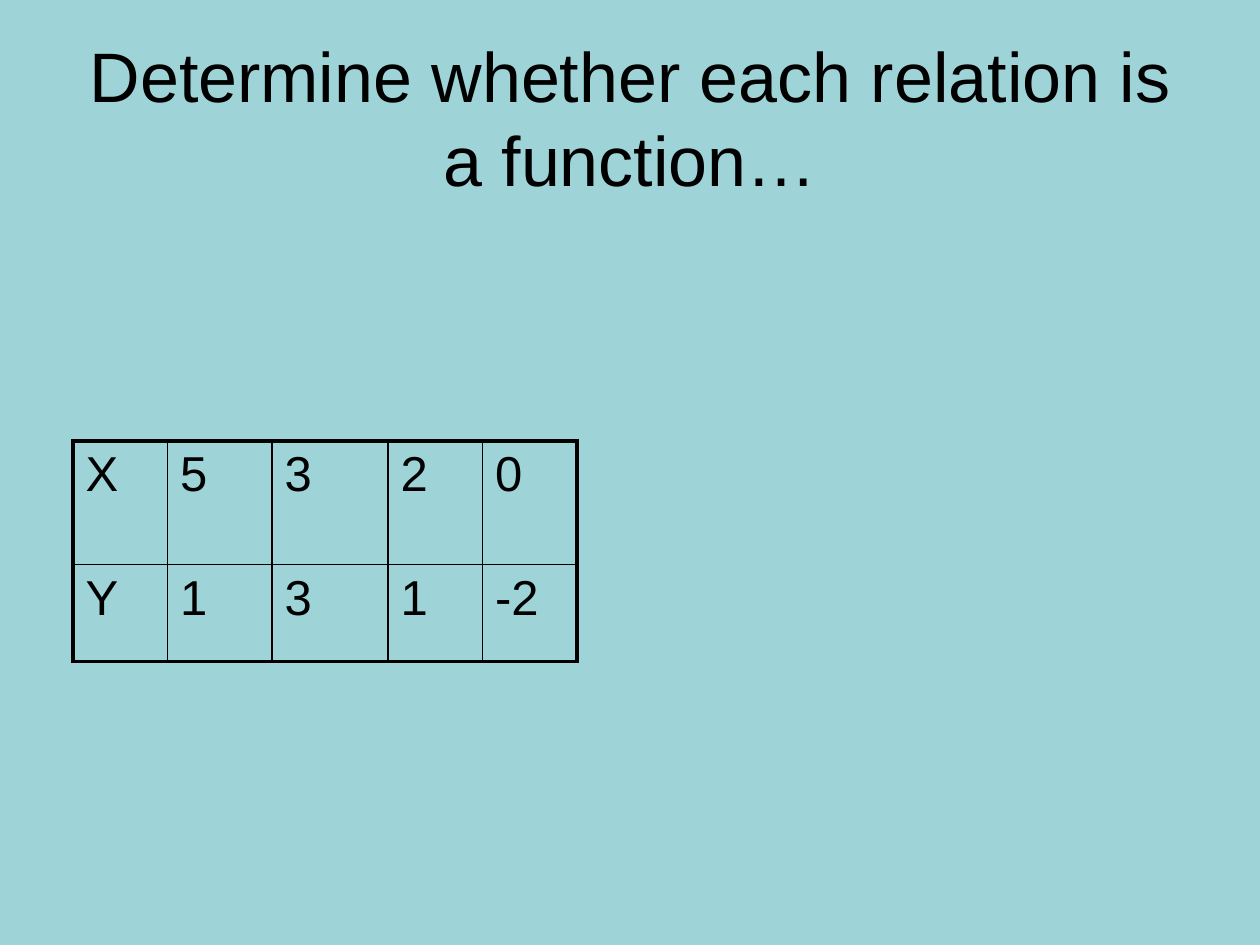
from pptx import Presentation
from pptx.dml.color import RGBColor
from pptx.enum.text import MSO_ANCHOR as Anchor, PP_ALIGN as Align
from pptx.oxml import parse_xml
from pptx.oxml.ns import nsdecls
from pptx.util import Inches, Pt

WIDE, HIGH = 10, 7.5
INK, PAPER = "000000", "9ED3D7"
THICK, THIN = 2.25, 1
COLS = [0.75, 0.83, 0.92, 0.75, 0.75]
ROWS = [0.98, 0.77]
PAIRS = [["X", "5", "3", "2", "0"], ["Y", "1", "3", "1", "-2"]]


def color(code):
    return RGBColor.from_string(code)


def place(left, top, width, height):
    shares = (left * WIDE, top * HIGH, width * WIDE, height * HIGH)
    return [Inches(share) for share in shares]


def write(frame, text, size, align):
    para = frame.paragraphs[0]
    para.alignment = align
    run = para.add_run()
    run.text = text
    for name, value in {"name": "Arial", "size": Pt(size), "bold": False}.items():
        setattr(run.font, name, value)
    run.font.color.rgb = color(INK)


def add_title(slide, text):
    frame = slide.shapes.add_textbox(*place(0.05, 0.04, 0.9, 1 / 6)).text_frame
    for name, value in {"word_wrap": True, "vertical_anchor": Anchor.MIDDLE}.items():
        setattr(frame, name, value)
    write(frame, text, 40, Align.CENTER)


def rule(cell, edges):
    props = cell._tc.get_or_add_tcPr()
    for spot, (side, outer) in enumerate(edges.items()):
        width = Pt(THICK if outer else THIN)
        line = parse_xml(
            f'<a:ln{side} {nsdecls("a")} w="{width}"><a:solidFill>'
            f'<a:srgbClr val="{INK}"/></a:solidFill></a:ln{side}>'
        )
        props.insert(spot, line)


def add_grid(slide, pairs):
    area = place(0.058, 3.5 / HIGH, sum(COLS) / WIDE, sum(ROWS) / HIGH)
    table = slide.shapes.add_table(len(ROWS), len(COLS), *area).table
    table.first_row = table.horz_banding = False
    for col, width in zip(table.columns, COLS):
        col.width = Inches(width)
    for row, height in zip(table.rows, ROWS):
        row.height = Inches(height)
    for r, values in enumerate(pairs):
        for c, value in enumerate(values):
            cell = table.cell(r, c)
            cell.fill.background()
            write(cell.text_frame, value, 28, Align.LEFT)
            rule(cell, {
                "L": c == 0,
                "R": c == len(COLS) - 1,
                "T": r == 0,
                "B": r == len(ROWS) - 1,
            })


def main():
    deck = Presentation()
    deck.slide_width, deck.slide_height = Inches(WIDE), Inches(HIGH)
    slide = deck.slides.add_slide(deck.slide_layouts[6])
    fill = slide.background.fill
    fill.solid()
    fill.fore_color.rgb = color(PAPER)
    add_title(slide, "Determine whether each relation is a function…")
    add_grid(slide, PAIRS)
    deck.save("out.pptx")


if __name__ == "__main__":
    main()
